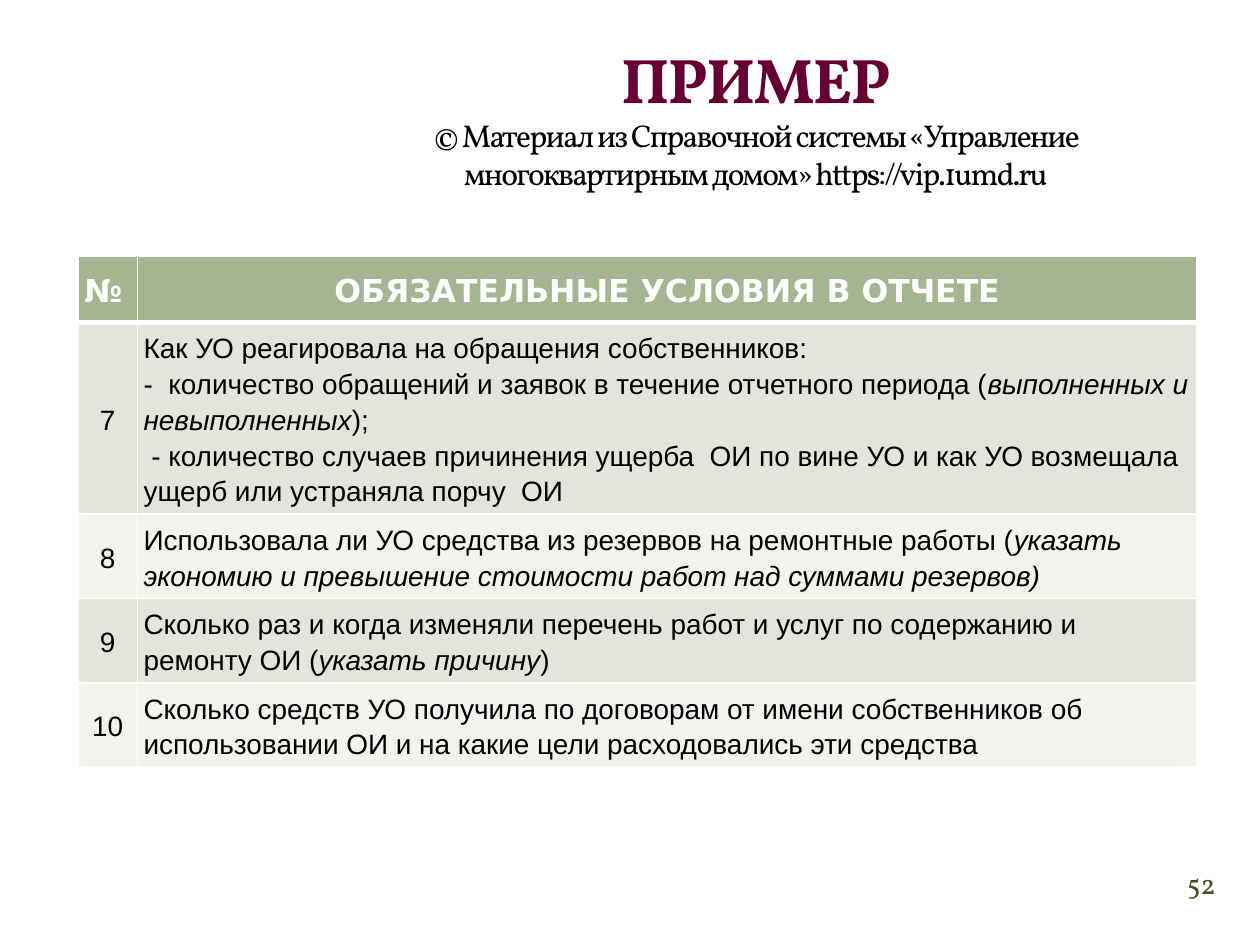
from lxml.etree import SubElement
from pptx import Presentation
from pptx.dml.color import RGBColor
from pptx.enum.text import MSO_ANCHOR as Anchor, MSO_AUTO_SIZE as AutoSize, PP_ALIGN as Align
from pptx.oxml.ns import qn
from pptx.util import Inches, Pt

WHITE = RGBColor(0xFF, 0xFF, 0xFF)
BLACK = RGBColor(0x00, 0x00, 0x00)
MAROON = RGBColor(0x66, 0x00, 0x33)
OLIVE = RGBColor(0x44, 0x4D, 0x26)
SAGE = RGBColor(0xA5, 0xB5, 0x92)
BANDS = (RGBColor(0xE1, 0xE5, 0xDC), RGBColor(0xF0, 0xF3, 0xEE))

HEADER = ("№", "ОБЯЗАТЕЛЬНЫЕ УСЛОВИЯ В ОТЧЕТЕ")
CONDITIONS = (
    ("7", "Как УО реагировала на обращения собственников:\n"
          "-  количество обращений и заявок в течение отчетного периода "
          "(*выполненных и невыполненных*);\n"
          " - количество случаев причинения ущерба  ОИ по вине УО и как УО "
          "возмещала ущерб или устраняла порчу  ОИ"),
    ("8", "Использовала ли УО средства из резервов на ремонтные работы "
          "(*указать экономию и превышение стоимости работ над суммами резервов)*"),
    ("9", "Сколько раз и когда изменяли перечень работ и услуг по содержанию "
          "и ремонту ОИ (*указать причину*)"),
    ("10", "Сколько средств УО получила по договорам от имени собственников об "
           "использовании ОИ и на какие цели расходовались эти средства"),
)
COLUMN_WIDTHS = (0.47, 8.41)
ROW_HEIGHTS = (0.53, 1.52, 0.67, 0.67, 0.67)


class ReportSlide:
    """Holds the text styles and the current slide, and adds its elements."""

    heading = {"name": "Vollkorn", "size": Pt(36), "bold": True, "color": MAROON}
    credit = {"name": "Vollkorn", "size": Pt(18), "bold": False, "color": BLACK}
    number = {"name": "Vollkorn", "size": Pt(16), "color": OLIVE}
    header = {"name": "DejaVu Sans", "size": Pt(18), "bold": True, "color": WHITE}
    body = {"name": "Arial", "size": Pt(16), "bold": False, "color": BLACK}

    def __init__(self, page):
        self.page = page

    def add_span(self, para, text, style, **extra):
        span = para.add_run()
        span.text = text
        for name, value in {**style, **extra}.items():
            if name == "color":
                span.font.color.rgb = value
            else:
                setattr(span.font, name, value)
        return span

    def add_title(self, heading, credit):
        title = self.page.shapes.title
        title.left, title.top = Inches(2.5), Inches(0.17)
        title.width, title.height = Inches(7), Inches(1.4)
        frame = title.text_frame
        frame.vertical_anchor = Anchor.BOTTOM
        frame.auto_size = AutoSize.TEXT_TO_FIT_SHAPE
        para = frame.paragraphs[0]
        para.alignment = Align.CENTER
        spans = [self.add_span(para, heading, self.heading)]
        para.add_line_break()
        spans.append(self.add_span(para, credit, self.credit))
        for span in spans:
            span.font._element.set("spc", "-100")

    def add_page_number(self, text):
        box = self.page.shapes.add_textbox(Inches(9.2), Inches(6.76), Inches(0.67), Inches(0.5))
        frame = box.text_frame
        frame.word_wrap = True
        frame.vertical_anchor = Anchor.MIDDLE
        for side in ("left", "top", "right", "bottom"):
            setattr(frame, f"margin_{side}", 0)
        para = frame.paragraphs[0]
        para.alignment = Align.CENTER
        self.add_span(para, text, self.number)

    def add_borders(self, cell, widths):
        properties = cell._tc.get_or_add_tcPr()
        for index, (side, width) in enumerate(widths.items()):
            line = SubElement(properties, qn(f"a:ln{side}"), w=str(Pt(width)))
            fill = SubElement(line, qn("a:solidFill"))
            SubElement(fill, qn("a:srgbClr"), val=str(WHITE))
            properties.remove(line)
            properties.insert(index, line)

    def fill_cell(self, cell, text, style, fill, alignment, borders):
        cell.fill.solid()
        cell.fill.fore_color.rgb = fill
        cell.vertical_anchor = Anchor.MIDDLE
        for side in ("left", "top", "right", "bottom"):
            setattr(cell, f"margin_{side}", Inches(0.05))
        for index, line in enumerate(text.split("\n")):
            frame = cell.text_frame
            para = frame.add_paragraph() if index else frame.paragraphs[0]
            para.alignment = alignment
            para.line_spacing = 1.15
            for order, part in enumerate(line.split("*")):
                if part:
                    self.add_span(para, part, style, italic=order % 2 == 1)
        self.add_borders(cell, borders)

    def add_conditions(self, header, conditions):
        rows = (header, *conditions)
        table = self.page.shapes.add_table(
            len(rows), len(header), Inches(0.62), Inches(2.03),
            Inches(sum(COLUMN_WIDTHS)), Inches(sum(ROW_HEIGHTS))).table
        for column, width in zip(table.columns, COLUMN_WIDTHS):
            column.width = Inches(width)
        for index, (row, height) in enumerate(zip(table.rows, ROW_HEIGHTS)):
            row.height = Inches(height)
            style = self.body if index else self.header
            fill = BANDS[(index - 1) % 2] if index else SAGE
            borders = {"L": 1, "R": 1, "T": 3 if index == 1 else 1, "B": 1 if index else 3}
            for column, text in enumerate(rows[index]):
                centred = (index == 0) == (column == 1)
                alignment = Align.CENTER if centred else Align.LEFT
                self.fill_cell(row.cells[column], text, style, fill, alignment, borders)


def main():
    deck = Presentation()
    deck.slide_width, deck.slide_height = Inches(10), Inches(7.5)
    slide = ReportSlide(deck.slides.add_slide(deck.slide_layouts[5]))
    slide.add_title("ПРИМЕР", "© Материал из Справочной системы «Управление "
                              "многоквартирным домом» https://vip.1umd.ru")
    slide.add_conditions(HEADER, CONDITIONS)
    slide.add_page_number("52")
    deck.save("out.pptx")


if __name__ == "__main__":
    main()
